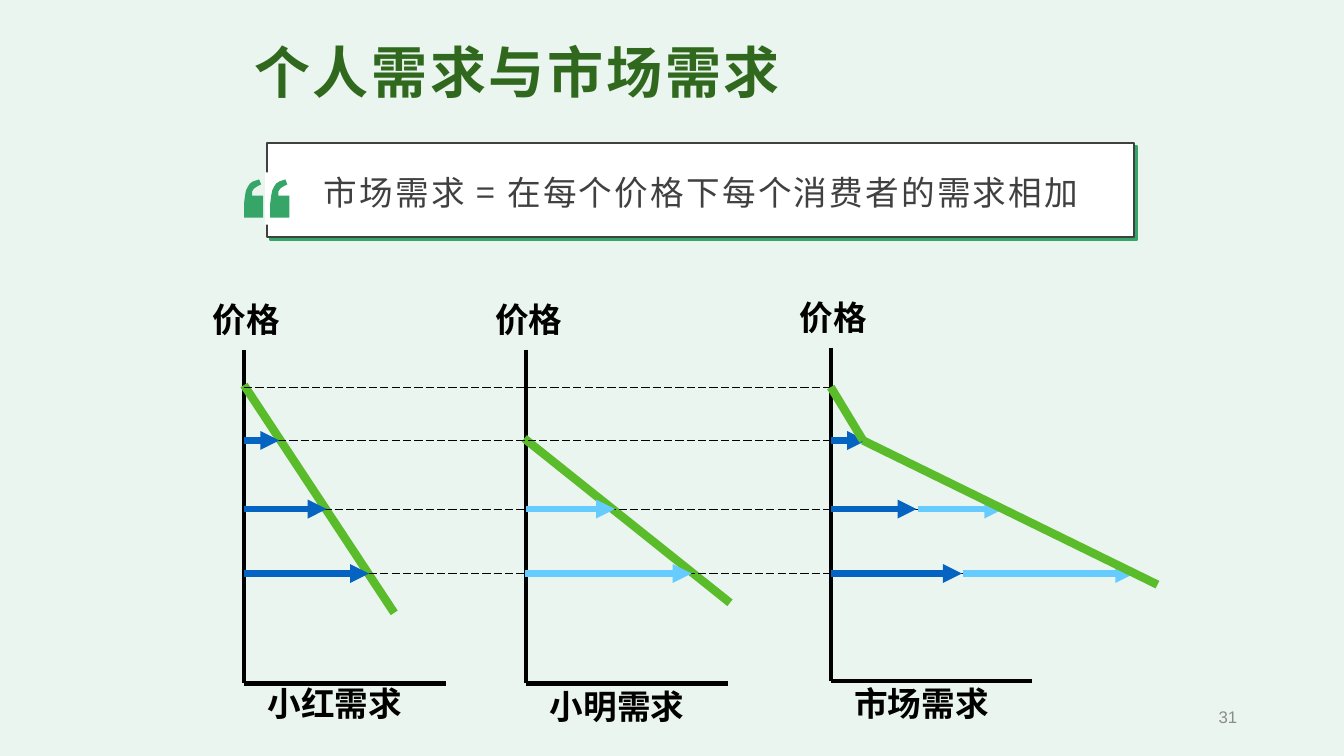
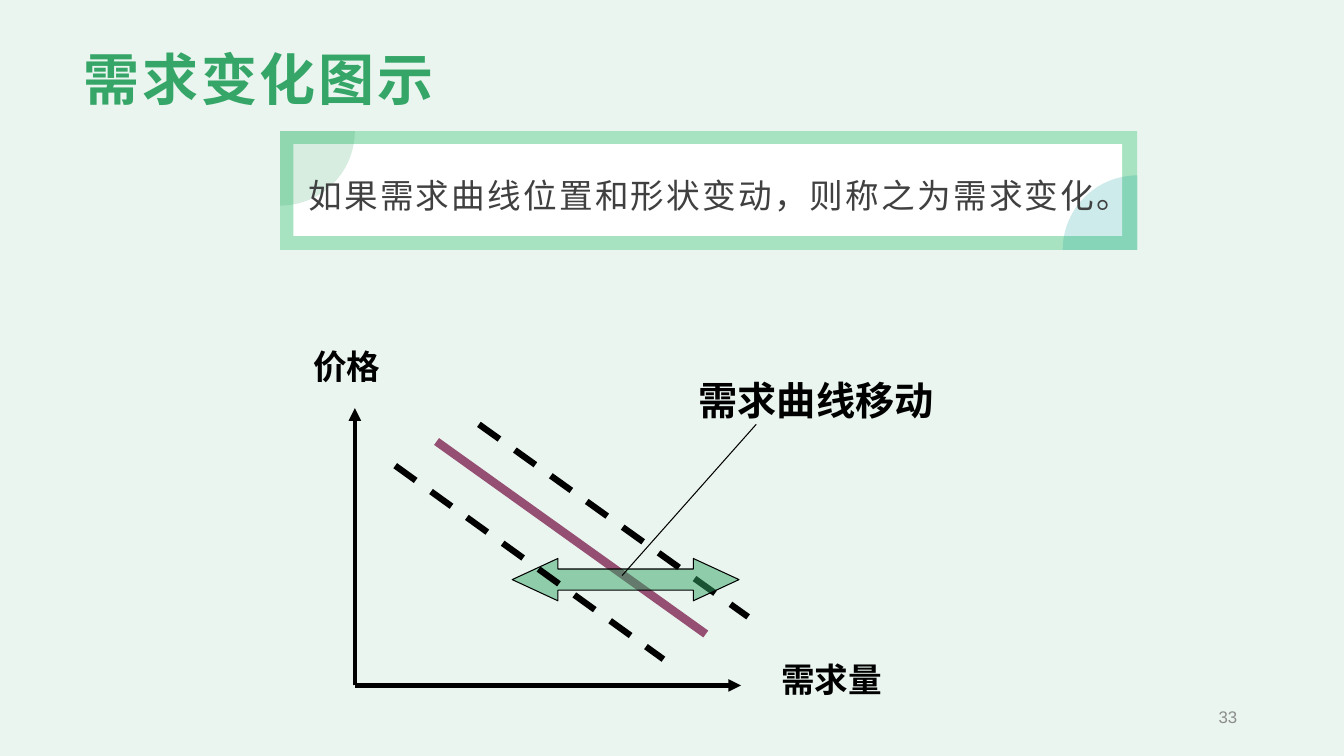
from dataclasses import dataclass
from math import cos, pi, sin
from typing import NamedTuple

from pptx import Presentation
from pptx.dml.color import RGBColor
from pptx.enum.dml import MSO_LINE
from pptx.enum.shapes import MSO_CONNECTOR, MSO_SHAPE
from pptx.enum.text import MSO_ANCHOR, MSO_AUTO_SIZE, PP_ALIGN
from pptx.oxml.ns import qn
from pptx.util import Inches, Pt
from lxml.etree import SubElement

# Shared look
BACKGROUND, GREEN, DARK_GREEN = "EAF5EF", "35A667", "30681D"
BLACK, WHITE, CHARCOAL, GRAY = "000000", "FFFFFF", "404040", "8C8C8C"
CURVE_GREEN, BLUE, SKY, PURPLE = "5BBC2B", "0563C1", "66CCFF", "954F72"
PALE_GREEN, TEAL = "A7E3C1", "089D96"
CHINESE, ARIAL, TIMES = "Noto Sans CJK SC", "Arial", "Times New Roman"


class Point(NamedTuple):
    x: float
    y: float


class Box(NamedTuple):
    left: float
    top: float
    width: float
    height: float


class Stroke(NamedTuple):
    color: str
    width: float
    dash: MSO_LINE | None = None
    arrow: bool = False


@dataclass
class TextStyle:
    size: float
    font: str = CHINESE
    color: str = BLACK
    bold: bool = False
    spacing: float = 0
    align: PP_ALIGN = PP_ALIGN.LEFT


@dataclass
class Panel:
    """One small demand chart."""
    name: str
    origin: Point
    name_top: float
    curve: list[Point]


AXIS = Stroke(BLACK, 3)
AXIS_ARROW = Stroke(BLACK, 3, arrow=True)
GUIDE = Stroke(BLACK, 0.75, MSO_LINE.LONG_DASH)
DEMAND = Stroke(CURVE_GREEN, 6)
SHIFTED = Stroke(BLACK, 4.5, MSO_LINE.DASH)
STATEMENT = TextStyle(24, color=CHARCOAL, spacing=1.6)
PANEL_LABEL = TextStyle(24, TIMES, bold=True, align=PP_ALIGN.CENTER)
AXIS_LABEL = TextStyle(24, bold=True)


def rgb(color: str) -> RGBColor:
    return RGBColor.from_string(color)


def place(shape, box: Box) -> None:
    shape.left, shape.top, shape.width, shape.height = map(Inches, box)


def write(paragraph, text: str, style: TextStyle) -> None:
    paragraph.text = text
    paragraph.alignment = style.align
    font = paragraph.font
    font.size, font.name, font.bold = Pt(style.size), style.font, style.bold
    font.color.rgb = rgb(style.color)
    properties = paragraph._p.pPr.find(qn("a:defRPr"))
    properties.set("spc", str(round(style.spacing * 100)))
    SubElement(properties, qn("a:ea")).set("typeface", CHINESE)


def add_text(slide, box: Box, text: str, style: TextStyle,
             insets: Box = Box(0.1, 0.05, 0.1, 0.05), wrap: bool = True):
    """Insets run left, top, right, bottom."""
    shape = slide.shapes.add_textbox(*map(Inches, box))
    frame = shape.text_frame
    frame.margin_left, frame.margin_top, frame.margin_right, frame.margin_bottom = map(Inches, insets)
    frame.word_wrap = wrap
    frame.auto_size = MSO_AUTO_SIZE.SHAPE_TO_FIT_TEXT
    write(frame.paragraphs[0], text, style)
    return shape


def add_statement(slide, box: Box, text: str, insets: Box) -> None:
    shape = add_text(slide, box, text, STATEMENT, insets)
    paragraph = shape.text_frame.paragraphs[0]
    paragraph.line_spacing = 1.3
    paragraph._p.pPr.set("marL", str(Inches(0.04)))


def paint(shape, fill: str, opacity: int = 100, line: Stroke | None = None) -> None:
    shape.shadow.inherit = False
    shape.fill.solid()
    shape.fill.fore_color.rgb = rgb(fill)
    if opacity < 100:
        color = shape._element.spPr.find(qn("a:solidFill"))[0]
        SubElement(color, qn("a:alpha")).set("val", str(opacity * 1000))
    if line is None:
        shape.line.fill.background()
    else:
        shape.line.color.rgb = rgb(line.color)
        shape.line.width = Pt(line.width)


def add_box(slide, box: Box, fill: str, opacity: int = 100,
            line: Stroke | None = None, kind: MSO_SHAPE = MSO_SHAPE.RECTANGLE):
    shape = slide.shapes.add_shape(kind, *map(Inches, box))
    paint(shape, fill, opacity, line)
    return shape


def add_outline(slide, contours: list[list[Point]], fill: str, opacity: int = 100) -> None:
    builder = None
    for contour in contours:
        points = [(Inches(x), Inches(y)) for x, y in contour]
        if builder is None:
            builder = slide.shapes.build_freeform(*points[0])
        else:
            builder.move_to(*points[0])
        builder.add_line_segments(points[1:], close=True)
    paint(builder.convert_to_shape(), fill, opacity)


def add_line(slide, start: Point, end: Point, stroke: Stroke) -> None:
    connector = slide.shapes.add_connector(MSO_CONNECTOR.STRAIGHT, *map(Inches, (*start, *end)))
    connector.line.color.rgb = rgb(stroke.color)
    connector.line.width = Pt(stroke.width)
    if stroke.dash is not None:
        connector.line.dash_style = stroke.dash
    if stroke.arrow:
        SubElement(connector.line._get_or_add_ln(), qn("a:tailEnd")).set("type", "triangle")
    SubElement(connector._element.spPr, qn("a:effectLst"))


def start_slide(presentation, title: str, box: Box, style: TextStyle, number: str):
    """A slide with its title and page number."""
    slide = presentation.slides.add_slide(presentation.slide_layouts[5])
    place(slide.shapes.title, box)
    frame = slide.shapes.title.text_frame
    frame.vertical_anchor = MSO_ANCHOR.MIDDLE
    frame.auto_size = MSO_AUTO_SIZE.NONE
    write(frame.paragraphs[0], title, style)
    page = add_text(slide, Box(9.42, 6.94, 2.95, 0.35), number,
                    TextStyle(12, ARIAL, GRAY, align=PP_ALIGN.RIGHT))
    page.text_frame.auto_size = MSO_AUTO_SIZE.NONE
    page.text_frame.vertical_anchor = MSO_ANCHOR.MIDDLE
    return slide


def add_offset_shadow(shape, color: str) -> None:
    effects = shape._element.spPr.find(qn("a:effectLst"))
    shadow = SubElement(effects, qn("a:outerShdw"), blurRad="0", dist=str(Pt(3)),
                        dir=str(45 * 60000), algn="tl", rotWithShape="0")
    SubElement(shadow, qn("a:srgbClr")).set("val", color)


def quote_mark(left: float, top: float) -> list[Point]:
    """A square foot with a curved tail, as one closed contour."""
    offsets = [(0.19, 0.38), (0, 0.38), (0, 0.24), (0.01, 0.16), (0.02, 0.11), (0.04, 0.07),
               (0.06, 0.04), (0.09, 0.02), (0.15, 0), (0.17, 0.05), (0.13, 0.07),
               (0.1, 0.09), (0.08, 0.12), (0.08, 0.16), (0.19, 0.16)]
    return [Point(left + x, top + y) for x, y in offsets]


def quarter_disc(corner: Point, radius: float, start: float) -> list[Point]:
    steps = 24
    angles = [start + pi / 2 * step / steps for step in range(steps + 1)]
    return [corner] + [Point(corner.x + radius * cos(a), corner.y + radius * sin(a)) for a in angles]


def add_panel(slide, panel: Panel) -> None:
    x, y = panel.origin
    tight = Box(0.02, 0.01, 0.02, 0.01)
    add_line(slide, Point(x, y - 3.31), panel.origin, AXIS)
    add_line(slide, panel.origin, Point(x + 2, y), AXIS)
    add_text(slide, Box(x + 0.21, panel.name_top, 1.38, 0.43), panel.name, PANEL_LABEL, tight, False)
    add_text(slide, Box(x - 0.33, y - 3.82, 0.71, 0.43), "价格", PANEL_LABEL, tight, False)
    add_curve(slide, panel)


def add_curve(slide, panel: Panel) -> None:
    for start, end in zip(panel.curve, panel.curve[1:]):
        add_line(slide, start, end, DEMAND)


def build_market_demand(presentation) -> None:
    slide = start_slide(presentation, "个人需求与市场需求", Box(2.42, 0.08, 8.5, 1.25),
                        TextStyle(40, CHINESE, DARK_GREEN, True, 2), "31")

    # Quoted definition
    card = add_box(slide, Box(2.65, 1.42, 8.6, 0.93), WHITE, line=Stroke(CHARCOAL, 1.75))
    add_offset_shadow(card, GREEN)
    add_box(slide, Box(2.63, 1.71, 0.25, 0.52), WHITE)
    add_outline(slide, [quote_mark(left, 1.78) for left in (2.42, 2.68)], GREEN)
    add_statement(slide, Box(3.09, 1.55, 8.26, 0.6), "市场需求 = 在每个价格下每个消费者的需求相加",
                  Box(0.08, 0.04, 0.08, 0.04))

    # Axes and individual curves
    market = Panel("市场需求", Point(8.24, 6.76), 6.77, [])
    for panel in (
        Panel("小红需求", Point(2.42, 6.78), 6.77, [Point(2.42, 3.82), Point(3.91, 6.08)]),
        Panel("小明需求", Point(5.22, 6.78), 6.79, [Point(5.2, 4.35), Point(7.24, 5.98)]),
        market,
    ):
        add_panel(slide, panel)

    # Price levels across the panels
    for y, end in ((3.84, 8.24), (4.37, 8.58), (5.05, 9.69), (5.69, 10.99)):
        add_line(slide, Point(2.42, y), Point(end, y), GUIDE)

    # Quantities demanded at each price
    quantities = {
        4.37: [(2.42, 2.77, BLUE), (8.24, 8.59, BLUE)],
        5.05: [(2.42, 3.24, BLUE), (5.22, 6.1, SKY), (8.24, 9.09, BLUE), (9.1, 9.95, SKY)],
        5.69: [(2.42, 3.66, BLUE), (5.21, 6.86, SKY), (8.24, 9.54, BLUE), (9.55, 11.25, SKY)],
    }
    for y, arrows in quantities.items():
        for start, end, color in arrows:
            add_line(slide, Point(start, y), Point(end, y), Stroke(color, 4.5, arrow=True))

    # Kinked market curve, above the arrows
    market.curve = [Point(8.24, 3.84), Point(8.56, 4.37), Point(11.48, 5.8)]
    add_curve(slide, market)


def build_demand_shift(presentation) -> None:
    slide = start_slide(presentation, "需求变化图示", Box(0.73, 0.53, 11.87, 0.48),
                        TextStyle(40, ARIAL, GREEN, True, 2), "33")

    # Framed statement with tinted corners
    frame = Box(2.78, 1.3, 8.5, 1.18)
    add_box(slide, frame, PALE_GREEN)
    add_box(slide, Box(2.91, 1.43, 8.22, 0.91), WHITE)
    top_left = Point(frame.left, frame.top)
    bottom_right = Point(frame.left + frame.width, frame.top + frame.height)
    for corner, angle, color in ((top_left, 0, GREEN), (bottom_right, pi, TEAL)):
        add_outline(slide, [quarter_disc(corner, 0.74, angle)], color, 20)
    add_statement(slide, Box(2.91, 1.62, 8.18, 0.52), "如果需求曲线位置和形状变动，则称之为需求变化。",
                  Box(0.11, 0, 0.09, 0))

    # Axes and curves
    origin = Point(3.52, 6.8)
    add_line(slide, origin, Point(3.52, 4.05), AXIS_ARROW)
    add_line(slide, origin, Point(7.35, 6.8), AXIS_ARROW)
    add_line(slide, Point(4.33, 4.38), Point(7, 6.29), Stroke(PURPLE, 6))
    add_line(slide, Point(4.75, 4.21), Point(7.42, 6.12), SHIFTED)

    # Shift arrow and its callout
    shift = add_box(slide, Box(5.08, 5.54, 2.25, 0.42), GREEN, 50, Stroke(BLACK, 0.75),
                    MSO_SHAPE.LEFT_RIGHT_ARROW)
    shift.adjustments[0], shift.adjustments[1] = 0.5, 1.08
    add_text(slide, Box(6.83, 3.68, 2.75, 0.57), "需求曲线移动", TextStyle(28, ARIAL, bold=True))
    add_line(slide, Point(7.5, 4.21), Point(6.17, 5.71), Stroke(BLACK, 0.75))
    add_line(slide, Point(3.92, 4.62), Point(6.58, 6.54), SHIFTED)

    # Axis names
    add_text(slide, Box(3.01, 3.38, 1.08, 0.5), "价格", AXIS_LABEL)
    add_text(slide, Box(7.65, 6.49, 1.31, 0.5), "需求量", AXIS_LABEL)


def main() -> None:
    presentation = Presentation()
    presentation.slide_width, presentation.slide_height = Inches(13.33), Inches(7.5)
    background = presentation.slide_master.background.fill
    background.solid()
    background.fore_color.rgb = rgb(BACKGROUND)
    build_market_demand(presentation)
    build_demand_shift(presentation)
    presentation.save("out.pptx")


if __name__ == "__main__":
    main()
